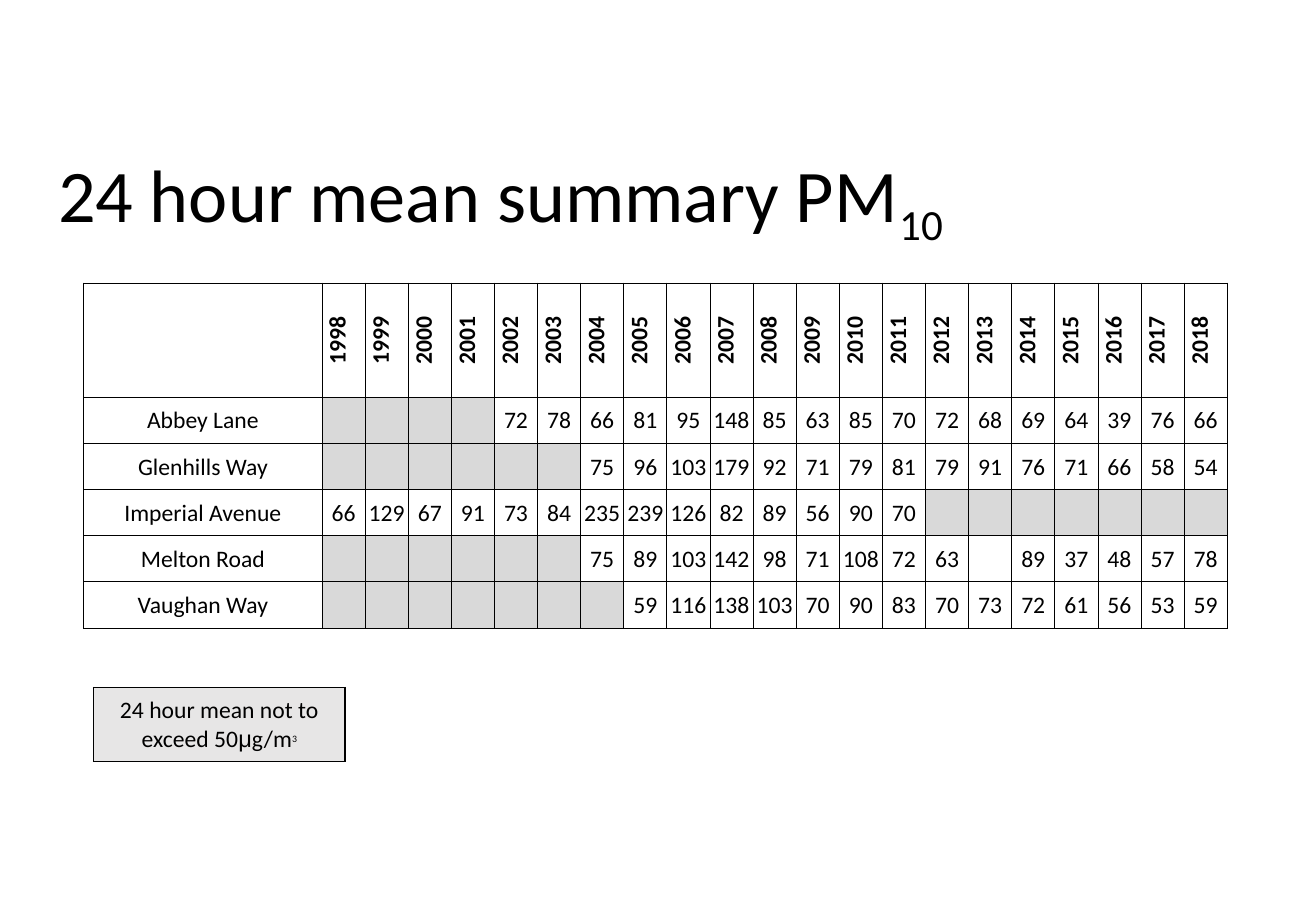
from lxml import etree
from pptx import Presentation
from pptx.dml.color import RGBColor
from pptx.enum.text import MSO_ANCHOR as Anchor, PP_ALIGN as Align
from pptx.oxml import parse_xml
from pptx.oxml.ns import nsdecls
from pptx.util import Pt

PX = 4572
BLACK, WHITE, SHADED, PALE = "000000", "FFFFFF", "D9D9D9", "E7E6E6"
hex_color = RGBColor.from_string


def add_span(para, text, size, bold=False, baseline=0, font="Calibri"):
    span = para.add_run()
    span.text = text
    span.font.size = Pt(size)
    span.font.bold = bold
    span.font.name = font
    span.font.color.rgb = hex_color(BLACK)
    if baseline:
        span.font._element.set("baseline", str(baseline * 1000))


def style_cell(cell, line_width, fill):
    cell.margin_left = cell.margin_top = cell.margin_right = 2 * PX
    cell.margin_bottom = 0
    cell.vertical_anchor = Anchor.MIDDLE
    cell.text_frame.paragraphs[0].alignment = Align.CENTER
    properties = cell._tc.get_or_add_tcPr()
    for side in ("lnL", "lnR", "lnT", "lnB"):
        properties.append(parse_xml(
            f'<a:{side} {nsdecls("a")} w="{Pt(line_width)}"><a:solidFill>'
            f'<a:srgbClr val="{BLACK}"/></a:solidFill></a:{side}>'))
    cell.fill.solid()
    cell.fill.fore_color.rgb = hex_color(fill)


deck = Presentation()
deck.slide_width, deck.slide_height = 2166 * PX, 1500 * PX
page = deck.slides.add_slide(deck.slide_layouts[6])

title = page.shapes.add_textbox(76 * PX, 176 * PX, 1868 * PX, 290 * PX)
title.text_frame.word_wrap = True
title.text_frame.vertical_anchor = Anchor.MIDDLE
para = title.text_frame.paragraphs[0]
para.line_spacing = 0.9
add_span(para, "24 hour mean summary PM", 44)
add_span(para, "10", 44, baseline=-25)

years = range(1998, 2019)
sites = [
    ("Abbey Lane", 2002, [72, 78, 66, 81, 95, 148, 85, 63, 85, 70, 72, 68, 69, 64, 39, 76, 66]),
    ("Glenhills Way", 2004, [75, 96, 103, 179, 92, 71, 79, 81, 79, 91, 76, 71, 66, 58, 54]),
    ("Imperial Avenue", 1998, [66, 129, 67, 91, 73, 84, 235, 239, 126, 82, 89, 56, 90, 70]),
    ("Melton Road", 2004, [75, 89, 103, 142, 98, 71, 108, 72, 63, "", 89, 37, 48, 57, 78]),
    ("Vaughan Way", 2005, [59, 116, 138, 103, 70, 90, 83, 70, 73, 72, 61, 56, 53, 59]),
]
site_width, year_width, header_height, row_height = 392, 71, 188, 76
table = page.shapes.add_table(
    len(sites) + 1, len(years) + 1, 138 * PX, 466 * PX,
    (site_width + year_width * len(years)) * PX,
    (header_height + row_height * len(sites)) * PX).table
table.first_row = table.horz_banding = False
for index, column in enumerate(table.columns):
    column.width = (year_width if index else site_width) * PX
for index, row in enumerate(table.rows):
    row.height = (row_height if index else header_height) * PX

style_cell(table.cell(0, 0), 0.5, WHITE)
for col, year in enumerate(years, 1):
    cell = table.cell(0, col)
    style_cell(cell, 0.5, WHITE)
    cell._tc.get_or_add_tcPr().set("vert", "vert270")
    add_span(cell.text_frame.paragraphs[0], str(year), 14, bold=True)

for row, (site, first_year, values) in enumerate(sites, 1):
    name_cell = table.cell(row, 0)
    style_cell(name_cell, 0.5, WHITE)
    add_span(name_cell.text_frame.paragraphs[0], site, 14)
    measured = dict(enumerate(values, first_year))
    for col, year in enumerate(years, 1):
        cell = table.cell(row, col)
        style_cell(cell, 0.5, WHITE if year in measured else SHADED)
        if measured.get(year):
            add_span(cell.text_frame.paragraphs[0], str(measured[year]), 14)

limit = page.shapes.add_table(1, 1, 154 * PX, 1132 * PX, 414 * PX, 122 * PX).table
limit.first_row = limit.horz_banding = False
limit_cell = limit.cell(0, 0)
style_cell(limit_cell, 1, PALE)
para = limit_cell.text_frame.paragraphs[0]
add_span(para, "24 hour mean not to exceed 50", 14)
add_span(para, "μ", 14, font="Arial")
add_span(para, "g/m", 14)
add_span(para, "3", 10, baseline=30)

deck.save("out.pptx")
